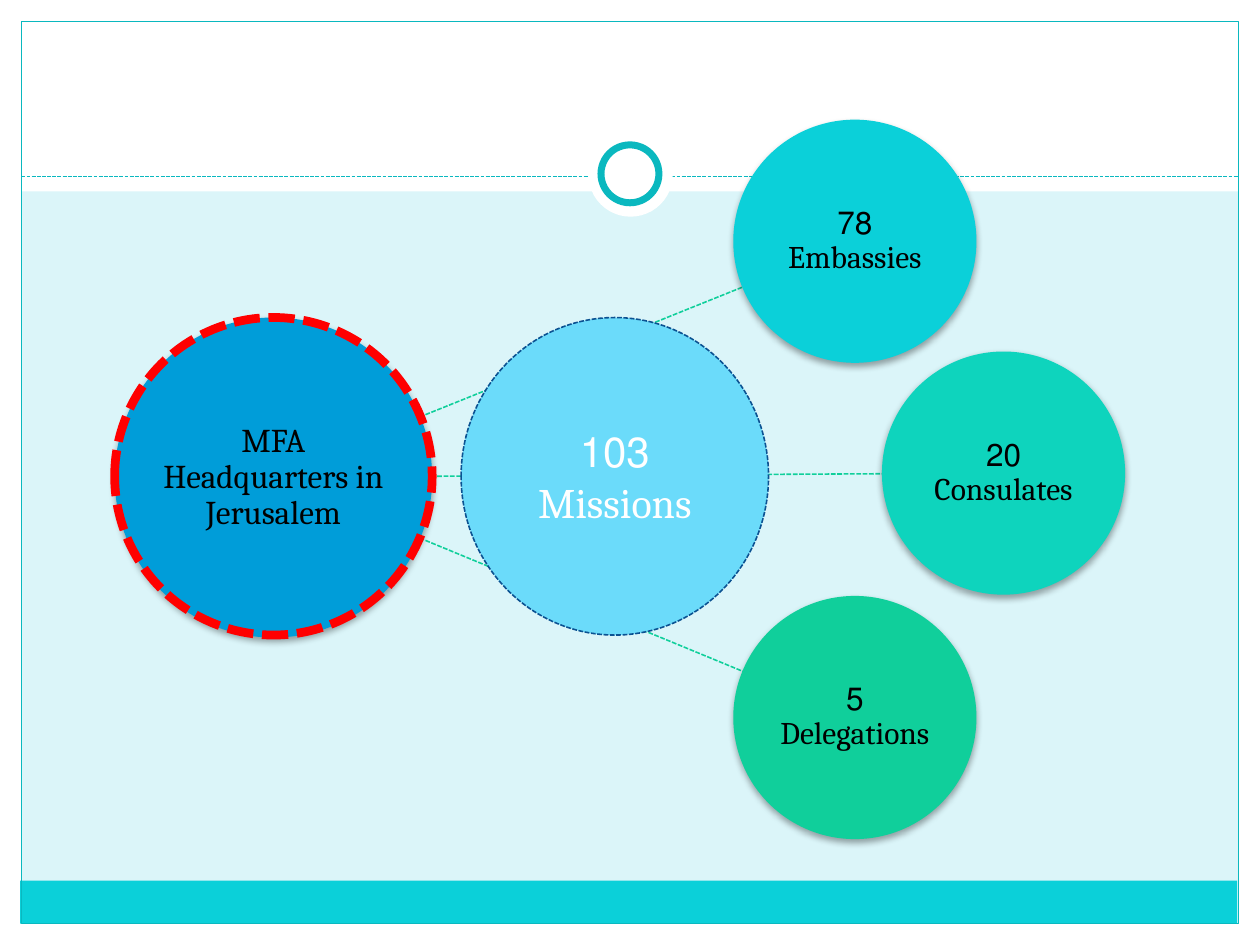
from dataclasses import dataclass

from lxml.etree import SubElement
from pptx import Presentation
from pptx.dml.color import RGBColor
from pptx.enum.dml import MSO_LINE_DASH_STYLE as Dash
from pptx.enum.shapes import MSO_CONNECTOR as Connector, MSO_SHAPE as Shape
from pptx.enum.text import MSO_ANCHOR as Anchor, PP_ALIGN as Align
from pptx.oxml.ns import qn
from pptx.util import Inches, Pt


@dataclass(frozen=True)
class Theme:
    """Colours, font and type sizes of the slide."""

    font: str = "Cambria"
    background: str = "DBF5F9"
    white: str = "FFFFFF"
    black: str = "000000"
    frame: str = "0AB8BF"
    cyan: str = "0BD0D9"
    blue: str = "009DD9"
    sky: str = "6BDBFA"
    navy: str = "0B5292"
    teal: str = "0ED4BD"
    green: str = "10CF9B"
    red: str = "FF0000"
    headquarters_size: float = 19
    branch_size: float = 18
    missions_size: float = 24


def write_text(shape, text, size, color, font, spacing=1.0, inset=0.01):
    """Write centred right-to-left text into a shape."""
    frame = shape.text_frame
    frame.word_wrap = True
    frame.vertical_anchor = Anchor.MIDDLE
    frame.margin_left = frame.margin_right = Inches(inset)
    frame.margin_top = frame.margin_bottom = Inches(min(inset, 0.05))
    paragraph = frame.paragraphs[0]
    paragraph.alignment = Align.CENTER
    paragraph.line_spacing = spacing
    paragraph._p.get_or_add_pPr().set("rtl", "1")
    run = paragraph.add_run()
    run.text = text
    run.font.name = font
    run.font.size = Pt(size)
    run.font.color.rgb = RGBColor.from_string(color)


class SlideBuilder:
    """Draws styled elements on the current slide."""

    def __init__(self, slide, theme):
        """Keep the slide and theme and paint the background."""
        self.slide = slide
        self.theme = theme
        fill = slide.background.fill
        fill.solid()
        fill.fore_color.rgb = RGBColor.from_string(theme.background)

    def style_line(self, line, color, width, dashed):
        """Set the colour, width and dash of a line."""
        line.color.rgb = RGBColor.from_string(color)
        line.width = Pt(width)
        if dashed:
            line.dash_style = Dash.SQUARE_DOT

    def shape(self, kind, box, fill=None, line=None, width=0.75, dashed=False):
        """Add a preset shape with optional fill and outline."""
        shape = self.slide.shapes.add_shape(kind, *map(Inches, box))
        shape.shadow.inherit = False
        if fill:
            shape.fill.solid()
            shape.fill.fore_color.rgb = RGBColor.from_string(fill)
        else:
            shape.fill.background()
        if line:
            self.style_line(shape.line, line, width, dashed)
        else:
            shape.line.fill.background()
        return shape

    def connector(self, start, end, color, width):
        """Add a dashed straight line."""
        ends = map(Inches, (*start, *end))
        connector = self.slide.shapes.add_connector(Connector.STRAIGHT, *ends)
        self.style_line(connector.line, color, width, True)
        SubElement(connector._element.spPr, qn("a:effectLst"))

    def shadowed_circle(self, box, fill, text, size):
        """Add a labelled circle with a soft shadow below it."""
        circle = self.shape(Shape.OVAL, box, fill)
        effects = circle._element.spPr.find(qn("a:effectLst"))
        shadow = SubElement(effects, qn("a:outerShdw"), blurRad=str(Pt(4)),
                            dist=str(Pt(2)), dir="5400000", rotWithShape="0")
        color = SubElement(shadow, qn("a:srgbClr"), val=self.theme.black)
        SubElement(color, qn("a:alpha"), val="35000")
        write_text(circle, text, size, self.theme.black, self.theme.font, 0.9)

    def frame(self):
        """Draw the page border, footer band and header ornament."""
        theme = self.theme
        for box in ((0, 7.33, 10, 0.17), (0, 0, 10, 1.52),
                    (0, 0, 0.17, 7.5), (9.83, 0, 0.17, 7.5)):
            self.shape(Shape.RECTANGLE, box, theme.white)
        self.shape(Shape.RECTANGLE, (0.16, 6.99, 9.66, 0.34), theme.cyan)
        self.shape(Shape.RECTANGLE, (0.17, 0.17, 9.66, 7.16), line=theme.frame)
        self.connector((0.17, 1.4), (9.83, 1.4), theme.frame, 0.75)
        self.shape(Shape.OVAL, (4.67, 1.05, 0.67, 0.67), theme.white)
        self.shape(Shape.OVAL, (4.77, 1.15, 0.46, 0.46), theme.white, theme.frame, 4)

    def network(self):
        """Draw the headquarters, its missions and their three kinds."""
        theme = self.theme
        self.shadowed_circle((0.91, 2.52, 2.52, 2.54), theme.blue,
                             "MFA Headquarters in Jerusalem", theme.headquarters_size)
        branches = (
            ("78 Embassies", theme.cyan, (5.82, 0.95), (3.33, 3.31), (5.89, 2.28)),
            ("20 Consulates", theme.teal, (7, 2.79), (3.42, 3.78), (7, 3.76)),
            ("5 Delegations", theme.green, (5.82, 4.73), (3.33, 4.27), (5.9, 5.33)),
        )
        for text, fill, corner, start, end in branches:
            self.connector(start, end, theme.green, 0.9)
            self.shadowed_circle((*corner, 1.93, 1.93), fill, text, theme.branch_size)
        missions = self.shape(Shape.OVAL, (3.66, 2.52, 2.44, 2.52), theme.sky,
                              theme.navy, 0.9, True)
        write_text(missions, "103 Missions", theme.missions_size, theme.white,
                   theme.font, inset=0.1)
        self.shape(Shape.OVAL, (0.91, 2.52, 2.52, 2.52), line=theme.red,
                   width=5, dashed=True)


def main():
    """Build and save the presentation."""
    presentation = Presentation()
    presentation.slide_width = Inches(10)
    presentation.slide_height = Inches(7.5)
    slide = presentation.slides.add_slide(presentation.slide_layouts[6])
    builder = SlideBuilder(slide, Theme())
    builder.frame()
    builder.network()
    presentation.save("out.pptx")


if __name__ == "__main__":
    main()
